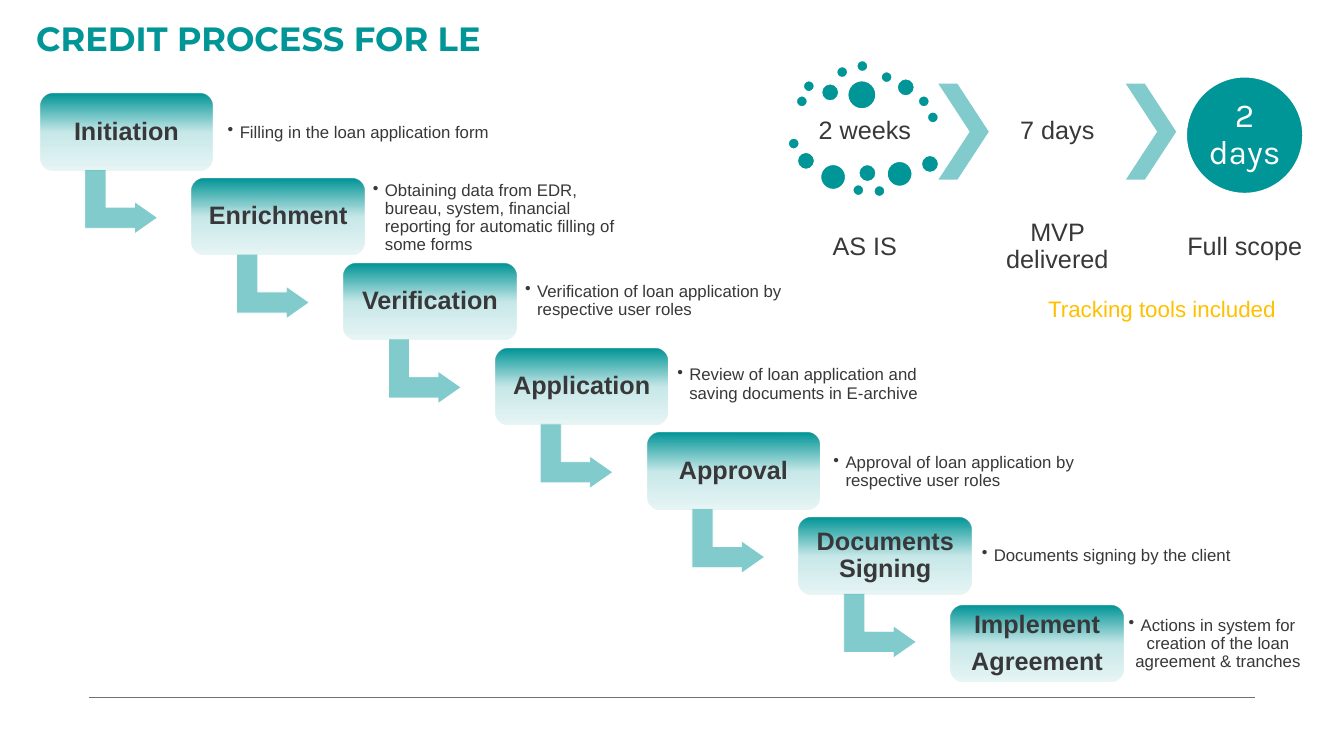
"""Build the slide that shows the credit process for LE as a staircase of steps."""
from dataclasses import dataclass

from lxml.etree import SubElement
from pptx import Presentation
from pptx.dml.color import RGBColor
from pptx.enum.shapes import MSO_CONNECTOR as Connector, MSO_SHAPE as Preset
from pptx.enum.text import MSO_ANCHOR as Anchor, PP_ALIGN as Align
from pptx.oxml.ns import qn
from pptx.util import Pt

TEAL, PALE_TEAL, INK = "009597", "82CBCC", "38383A"
WHITE, AMBER, GREY = "FFFFFF", "FFC000", "707173"
FIRST_LEFT, FIRST_TOP = 28.8, 67
STEP_RIGHT, STEP_DOWN = 108.4, 60.6
STEP_WIDTH, STEP_HEIGHT = 123.1, 54.4
STEP_SHADES = ((0, 100), (50, 22), (100, 9))


@dataclass(frozen=True)
class Frame:
    left: float
    top: float
    width: float
    height: float

    def lengths(self) -> list:
        return [Pt(value) for value in (self.left, self.top, self.width, self.height)]


@dataclass(frozen=True)
class TextStyle:
    size: float = 18
    color: str = INK
    font: str = "Arial"
    bold: bool = False
    align: Align = Align.CENTER
    anchor: Anchor = Anchor.MIDDLE
    spacing: float = 0.9
    after: float = 7
    inset: float = 2
    bullet: bool = False


@dataclass(frozen=True)
class Step:
    title: str
    note: str
    note_frame: Frame
    note_align: Align = Align.LEFT
    extra_drop: float = 0


@dataclass(frozen=True)
class Dot:
    left: float
    top: float
    size: float = 8


@dataclass(frozen=True)
class Stage:
    duration: str
    caption: str
    left: float
    duration_top: float = 0
    duration_height: float = 0


STEPS = (
    Step("Initiation", "Filling in the loan application form",
         Frame(159.1, 74.9, 196, 39.6)),
    Step("Enrichment", "Obtaining data from EDR, bureau, system, financial reporting "
         "for automatic filling of some forms", Frame(262.8, 136.1, 196.6, 39.6)),
    Step("Verification", "Verification of loan application by respective user roles",
         Frame(371.5, 195.1, 196.6, 39.6)),
    Step("Application", "Review of loan application and saving documents in E-archive",
         Frame(480.2, 254.9, 196.6, 39.6)),
    Step("Approval", "Approval of loan application by respective user roles",
         Frame(591.8, 317.5, 196.6, 39.6)),
    Step("Documents Signing", "Documents signing by the client",
         Frame(697.7, 377.3, 196.6, 39.6)),
    Step("Implement\nAgreement", "Actions in system for creation of the loan agreement "
         "& tranches", Frame(791.3, 431.3, 149, 57.6), Align.CENTER, 2),
)
DOTS = (
    Dot(568.8, 68.4), Dot(573.8, 57.6), Dot(586.8, 59.8, 12.4), Dot(597.6, 47.5),
    Dot(612, 43.2), Dot(629.3, 51.1), Dot(640.8, 56.2, 12.4), Dot(655.9, 68.4),
    Dot(662.4, 79.9), Dot(605.5, 57.6, 20.2), Dot(563, 98.6), Dot(569.5, 108.7, 12.4),
    Dot(586.1, 117.4, 18), Dot(609.1, 131.8), Dot(613.4, 117.4, 12.4),
    Dot(624.2, 132.5), Dot(633.6, 115.2, 18), Dot(658.1, 110.9, 12.4),
)
STAGES = (
    Stage("2 weeks", "AS IS", 568.8, 77.8, 32.4),
    Stage("7 days", "MVP delivered", 706.3, 59.8, 68.4),
    Stage("", "Full scope", 840.2),
)
CHEVRON_LEFTS = (670.3, 804.2)

LABEL = TextStyle()
STEP_TITLE = TextStyle(bold=True, inset=5)
FULL_SCOPE = TextStyle(24, WHITE, "Karla", inset=0)
HEADING = TextStyle(24, TEAL, "Montserrat", True, Align.LEFT, Anchor.TOP, 0.85, 0)
TRACKING = TextStyle(16, AMBER, align=Align.LEFT, anchor=Anchor.TOP, spacing=1, after=0)


def rgb(color: str) -> RGBColor:
    return RGBColor.from_string(color)


def write(shape, text: str, style: TextStyle, side_inset: float | None = None) -> None:
    frame = shape.text_frame
    frame.word_wrap = True
    frame.vertical_anchor = style.anchor
    frame.margin_top = frame.margin_bottom = Pt(style.inset)
    frame.margin_left = frame.margin_right = Pt(
        style.inset if side_inset is None else side_inset)
    frame.text = text
    for paragraph in frame.paragraphs:
        paragraph.alignment = style.align
        paragraph.line_spacing = style.spacing
        paragraph.space_after = Pt(style.after)
        if style.bullet:
            paragraph.level = 1
            properties = paragraph._p.get_or_add_pPr()
            properties.set("marL", str(Pt(8.6)))
            properties.set("indent", str(-Pt(8.6)))
            SubElement(properties, qn("a:buChar")).set("char", "•")
        for run in paragraph.runs:
            run.font.size = Pt(style.size)
            run.font.name = style.font
            run.font.bold = style.bold
            run.font.color.rgb = rgb(style.color)


def add_text(slide, frame: Frame, text: str, style: TextStyle,
             side_inset: float | None = None) -> None:
    write(slide.shapes.add_textbox(*frame.lengths()), text, style, side_inset)


def add_preset(slide, preset: Preset, frame: Frame, color: str, outline: float = 0,
               adjustments: tuple[float, ...] = ()):
    shape = slide.shapes.add_shape(preset, *frame.lengths())
    shape.shadow.inherit = False
    shape.fill.solid()
    shape.fill.fore_color.rgb = rgb(color)
    if outline:
        shape.line.color.rgb = rgb(WHITE)
        shape.line.width = Pt(outline)
    else:
        shape.line.fill.background()
    for index, value in enumerate(adjustments):
        shape.adjustments[index] = value
    return shape


def set_alpha(color_element, percent: int) -> None:
    SubElement(color_element, qn("a:alpha")).set("val", str(percent * 1000))


def shade(shape) -> None:
    shape.fill.gradient()
    shape.fill.gradient_angle = 270
    stops = next(shape._element.spPr.iter(qn("a:gsLst")))
    for stop in list(stops):
        stops.remove(stop)
    for position, opacity in STEP_SHADES:
        stop = SubElement(stops, qn("a:gs"))
        stop.set("pos", str(position * 1000))
        color = SubElement(stop, qn("a:srgbClr"))
        color.set("val", TEAL)
        set_alpha(color, opacity)


def add_step(slide, index: int, step: Step) -> None:
    left = FIRST_LEFT + index * STEP_RIGHT
    top = FIRST_TOP + index * STEP_DOWN + step.extra_drop
    if index < len(STEPS) - 1:
        arrow = add_preset(slide, Preset.BENT_UP_ARROW,
                           Frame(left + 34.8, top + 51, 46, 52), TEAL, 0.5,
                           (0.328, 0.25, 0.358))
        arrow.rotation = 90
        set_alpha(next(arrow._element.spPr.iter(qn("a:srgbClr"))), 49)
    block = add_preset(slide, Preset.ROUNDED_RECTANGLE,
                       Frame(left, top, STEP_WIDTH, STEP_HEIGHT), TEAL)
    shade(block)
    write(block, step.title, STEP_TITLE)
    add_text(slide, step.note_frame, step.note,
             TextStyle(12, align=step.note_align, after=1.8, inset=3.6, bullet=True))


def add_timeline(slide) -> None:
    for stage in STAGES:
        if stage.duration:
            add_text(slide, Frame(stage.left, stage.duration_top, 97.9,
                                  stage.duration_height), stage.duration, LABEL)
        add_text(slide, Frame(stage.left, 146.2, 97.9, 60.5), stage.caption, LABEL)
    for dot in DOTS:
        add_preset(slide, Preset.OVAL, Frame(dot.left, dot.top, dot.size, dot.size),
                   TEAL, 1)
    for left in CHEVRON_LEFTS:
        add_preset(slide, Preset.CHEVRON, Frame(left, 59.8, 36, 68.6), PALE_TEAL,
                   adjustments=(0.623,))
    goal = add_preset(slide, Preset.OVAL, Frame(847.4, 54.9, 83.3, 83.3), TEAL, 1)
    write(goal, "2 days", FULL_SCOPE)


def main() -> None:
    deck = Presentation()
    deck.slide_width, deck.slide_height = Pt(960), Pt(540)
    slide = deck.slides.add_slide(deck.slide_layouts[6])
    footer_rule = slide.shapes.add_connector(Connector.STRAIGHT, Pt(63.4), Pt(498.2),
                                             Pt(896.4), Pt(498.2))
    footer_rule.line.color.rgb = rgb(GREY)
    footer_rule.line.width = Pt(0.5)
    SubElement(footer_rule._element.spPr, qn("a:effectLst"))
    for index, step in enumerate(STEPS):
        add_step(slide, index, step)
    add_timeline(slide)
    add_text(slide, Frame(741.6, 208.8, 198.7, 26.6), "Tracking tools included",
             TRACKING, 7.2)
    add_text(slide, Frame(18.7, 15.1, 941.3, 31), "CREDIT PROCESS FOR LE", HEADING, 7.2)
    deck.save("out.pptx")


if __name__ == "__main__":
    main()
